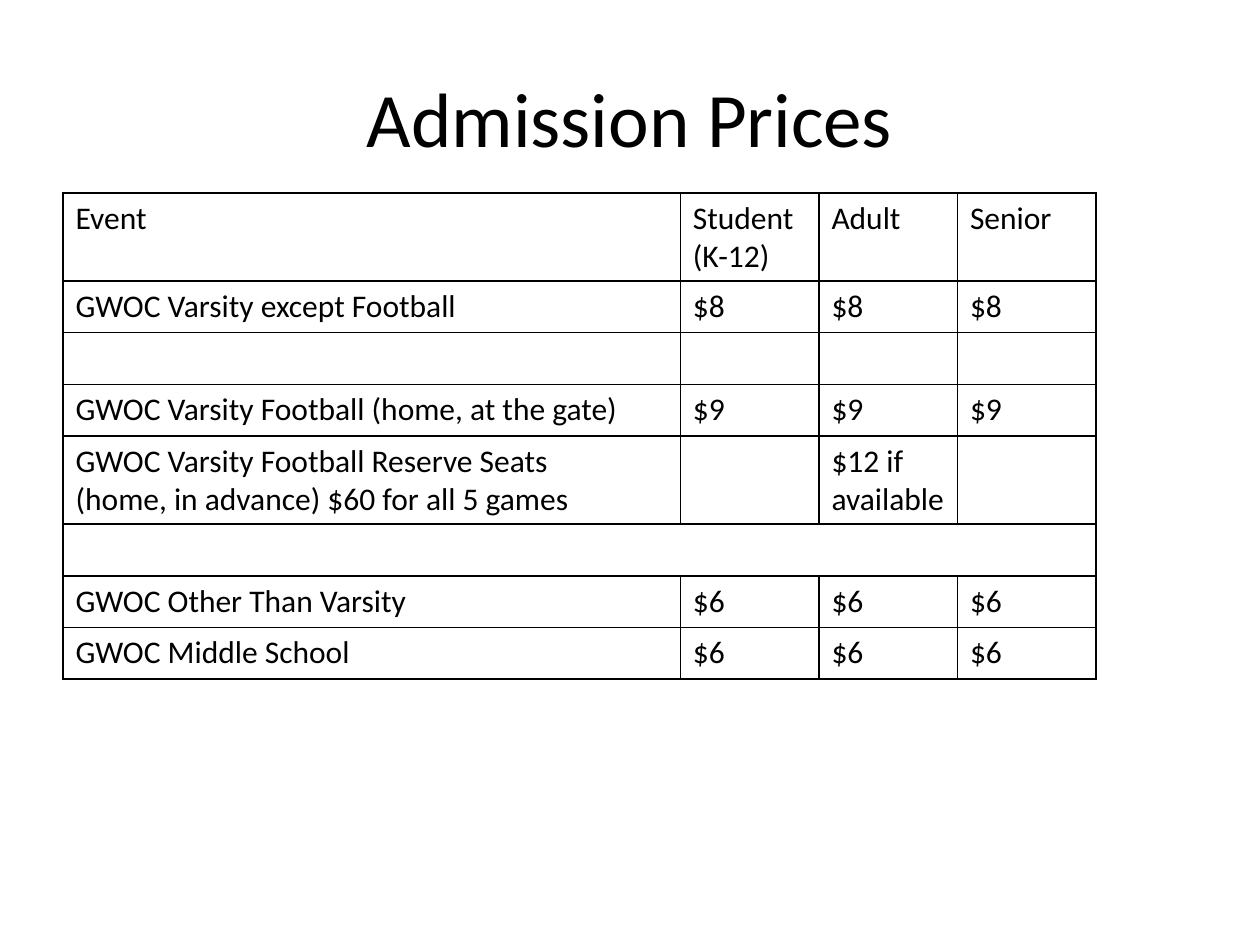
import dataclasses

import pptx
import pptx.dml.color
import pptx.enum.text
import pptx.oxml
import pptx.oxml.ns
import pptx.util

Inches = pptx.util.Inches
PP_ALIGN = pptx.enum.text.PP_ALIGN


@dataclasses.dataclass(frozen=True)
class Theme:
    """Colours, font and type sizes of the slide."""
    font: str = "Calibri"
    ink: str = "000000"
    paper: str = "FFFFFF"
    title_size: int = 44
    body_size: int = 18
    border_width: int = 1


THEME = Theme()
COLUMN_WIDTHS = [4.9, 1.1, 1.1, 1.1]
ROW_HEIGHT = 0.41
SPACER_ROW = 5
PRICES = [
    ["Event", "Student (K-12)", "Adult", "Senior"],
    ["GWOC Varsity except Football"] + ["$8"] * 3,
    [""] * 4,
    ["GWOC Varsity Football (home, at the gate)"] + ["$9"] * 3,
    ["GWOC Varsity Football Reserve Seats \v(home, in advance) $60 for all 5 games",
     "", "$12 if available", ""],
    [""] * 4,
    ["GWOC Other Than Varsity"] + ["$6"] * 3,
    ["GWOC Middle School"] + ["$6"] * 3,
]


def write_text(tf, text, size=THEME.body_size, color=THEME.ink, align=PP_ALIGN.LEFT):
    """Put formatted text in the first paragraph of a text frame."""
    p = tf.paragraphs[0]
    p.text = text
    p.alignment = align
    for r in p.runs:
        r.font.name = THEME.font
        r.font.size = pptx.util.Pt(size)
        r.font.color.rgb = pptx.dml.color.RGBColor.from_string(color)


def set_borders(cell):
    """Draw a solid line on every side of a cell."""
    tc_pr = cell._tc.get_or_add_tcPr()
    width = pptx.util.Pt(THEME.border_width)
    for side in ("lnL", "lnR", "lnT", "lnB"):
        tc_pr.append(pptx.oxml.parse_xml(
            f'<a:{side} {pptx.oxml.ns.nsdecls("a")} w="{width}"><a:solidFill>'
            f'<a:srgbClr val="{THEME.ink}"/></a:solidFill></a:{side}>'))


def add_title(s, left, top, width, height):
    """Place the centred slide title in the given box."""
    sp = s.shapes.add_textbox(left, top, width, height)
    tf = sp.text_frame
    tf.word_wrap = True
    tf.vertical_anchor = pptx.enum.text.MSO_ANCHOR.MIDDLE
    write_text(tf, "Admission Prices", size=THEME.title_size, align=PP_ALIGN.CENTER)


def add_price_table(s, left, top, width, height):
    """Place the bordered table of admission prices in the given box."""
    table = s.shapes.add_table(
        len(PRICES), len(COLUMN_WIDTHS), left, top, width, height).table
    table.first_row = False
    table.horz_banding = False
    for column, share in zip(table.columns, COLUMN_WIDTHS):
        column.width = int(width * share / sum(COLUMN_WIDTHS))
    for i, (row, texts) in enumerate(zip(table.rows, PRICES)):
        row.height = Inches(ROW_HEIGHT)
        for cell, text in zip(row.cells, texts):
            set_borders(cell)
            cell.fill.background()
            write_text(cell.text_frame, text)
    table.cell(SPACER_ROW, 0).merge(table.cell(SPACER_ROW, len(COLUMN_WIDTHS) - 1))


def main():
    """Build the admission prices slide and save it."""
    prs = pptx.Presentation()
    prs.slide_width, prs.slide_height = Inches(10), Inches(7.5)
    s = prs.slides.add_slide(prs.slide_layouts[6])
    s.background.fill.solid()
    s.background.fill.fore_color.rgb = pptx.dml.color.RGBColor.from_string(THEME.paper)
    add_title(s, Inches(0.5), Inches(0.3), Inches(9), Inches(1.25))
    add_price_table(s, Inches(0.5), Inches(1.53), Inches(sum(COLUMN_WIDTHS)),
                    Inches(ROW_HEIGHT * len(PRICES)))
    prs.save("out.pptx")


if __name__ == "__main__":
    main()
